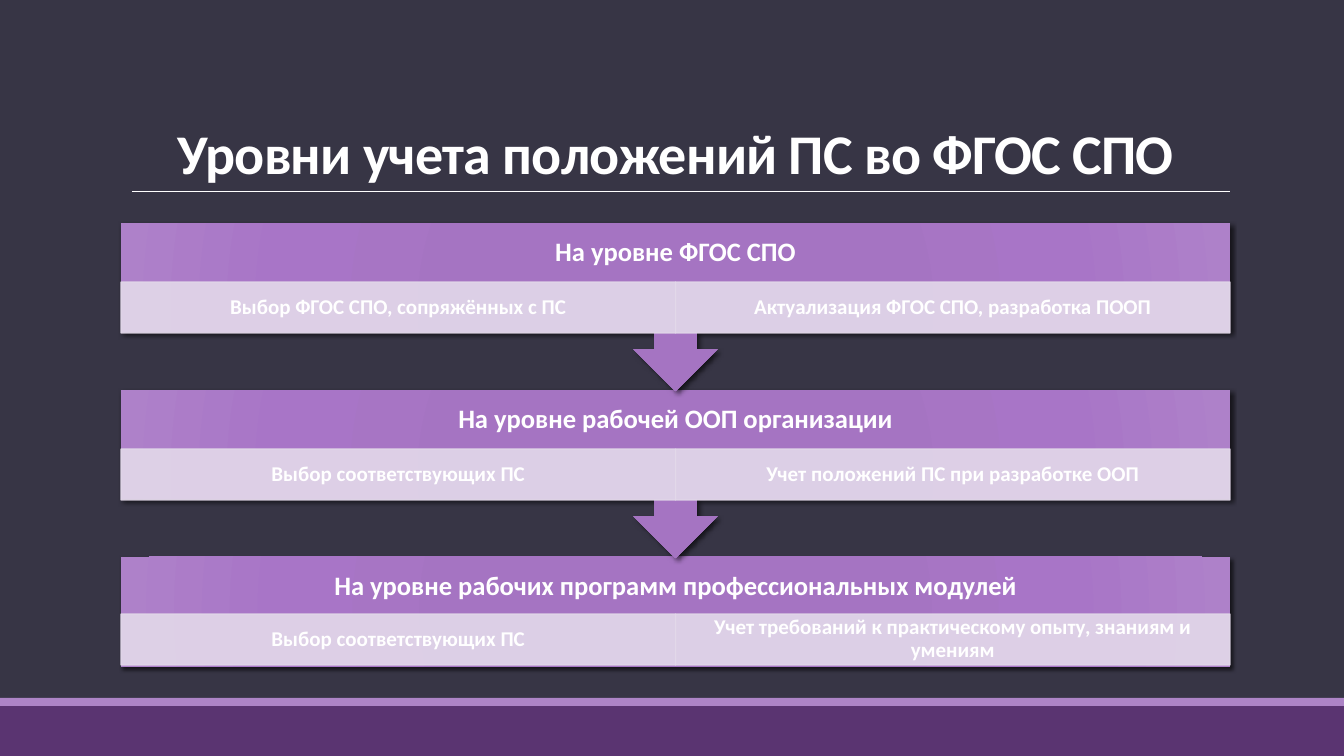
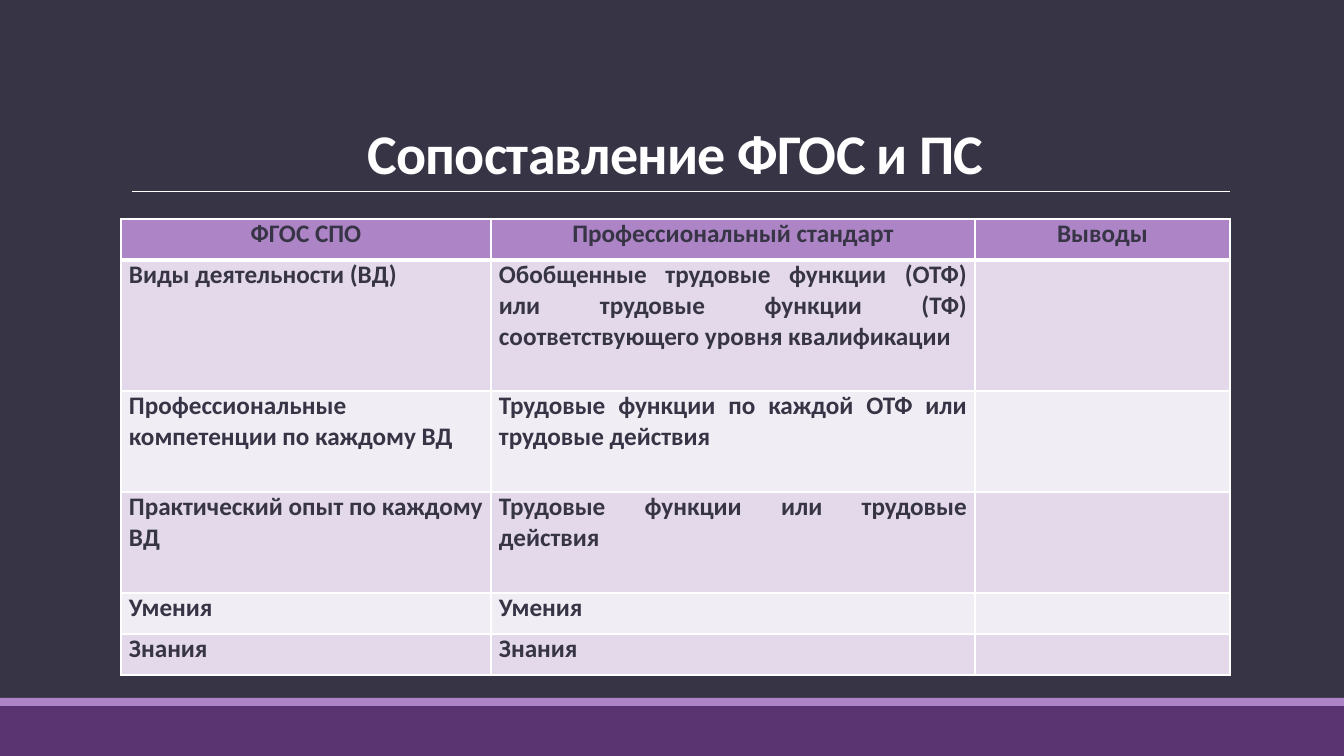
"""Build two slides on how professional standards feed into educational standards."""
from dataclasses import dataclass

from lxml.etree import SubElement
from pptx import Presentation
from pptx.dml.color import RGBColor
from pptx.enum.shapes import MSO_CONNECTOR, MSO_SHAPE
from pptx.enum.text import MSO_ANCHOR as Anchor, PP_ALIGN as Align
from pptx.oxml import parse_xml
from pptx.oxml.ns import nsdecls, qn
from pptx.shapes.autoshape import Shape
from pptx.slide import Slide
from pptx.table import _Cell as Cell
from pptx.text.text import TextFrame
from pptx.util import Emu, Pt

SLIDE_W, SLIDE_H = 1344, 756
EMU_PER_PX = 12192000 / SLIDE_W
LEFT, CONTENT_W = 121, 1109

FONT = "Calibri"
WHITE = "FFFFFF"
DARK = "373545"
PLUM = "5A3471"
LILAC = "AD84C6"
PALE = "E3D9EA"
PALEST = "F1EDF5"
LEVEL_GRADIENT = ((0, "A372C2"), (34, "A574C2"), (70, "A875C7"), (100, "AE81C9"))

LEVEL_TOP, LEVEL_STEP = 223, 167
CALLOUT_H, LAST_LEVEL_H = 168, 110
HEADING_H, STEP_H = 59, 51


@dataclass(frozen=True)
class Box:
    left: int
    top: int
    width: int
    height: int

    def emu(self) -> tuple[Emu, ...]:
        return tuple(px(v) for v in (self.left, self.top, self.width, self.height))


@dataclass(frozen=True)
class TextStyle:
    size: int
    color: str = WHITE
    align: Align = Align.CENTER
    line_spacing: float = 1.0
    space_after: int = 0
    tracking: int = 0


@dataclass(frozen=True)
class Level:
    heading: str
    steps: tuple[str, str]
    heading_h: int = HEADING_H


@dataclass(frozen=True)
class Row:
    height: int
    texts: tuple[str, ...]


TITLE_STYLE = TextStyle(40, line_spacing=0.85, tracking=-50)
HEADING_STYLE = TextStyle(19, line_spacing=0.9)
STEP_STYLE = TextStyle(15, line_spacing=0.9)
HEADER_STYLE = TextStyle(18, DARK, space_after=6)
BODY_STYLE = TextStyle(18, DARK, Align.JUSTIFY, space_after=6)

LEVELS = (
    Level("На уровне ФГОС СПО",
          ("Выбор ФГОС СПО, сопряжённых с ПС", "Актуализация ФГОС СПО, разработка ПООП")),
    Level("На уровне рабочей ООП организации",
          ("Выбор соответствующих ПС", "Учет положений ПС при разработке ООП")),
    Level("На уровне рабочих программ профессиональных модулей",
          ("Выбор соответствующих ПС",
           "Учет требований к практическому опыту, знаниям и умениям"), 57),
)

COLUMN_WIDTHS = (370, 484, 255)
ROWS = (
    Row(41, ("ФГОС СПО", "Профессиональный стандарт", "Выводы")),
    Row(131, ("Виды деятельности (ВД)",
              "Обобщенные трудовые функции (ОТФ) или трудовые функции (ТФ) "
              "соответствующего уровня квалификации", "")),
    Row(101, ("Профессиональные компетенции по каждому ВД",
              "Трудовые функции по каждой ОТФ или трудовые действия", "")),
    Row(101, ("Практический опыт по каждому ВД",
              "Трудовые функции или трудовые действия", "")),
    Row(41, ("Умения", "Умения", "")),
    Row(41, ("Знания", "Знания", "")),
)


def px(value: float) -> Emu:
    return Emu(round(value * EMU_PER_PX))


def rgb(value: str) -> RGBColor:
    return RGBColor.from_string(value)


def write(frame: TextFrame, text: str, style: TextStyle) -> None:
    frame.text = text
    paragraph = frame.paragraphs[0]
    paragraph.alignment = style.align
    paragraph.line_spacing = style.line_spacing
    paragraph.space_after = Pt(style.space_after)
    for run in paragraph.runs:
        run.font.name = FONT
        run.font.size = Pt(style.size)
        run.font.bold = True
        run.font.color.rgb = rgb(style.color)
        if style.tracking:
            run.font._element.set("spc", str(style.tracking))


def set_insets(frame: TextFrame, side: int, edge: int) -> None:
    frame.margin_left = frame.margin_right = px(side)
    frame.margin_top = frame.margin_bottom = px(edge)


def add_label(slide: Slide, box: Box, text: str, style: TextStyle,
              anchor: Anchor, side: int, edge: int) -> None:
    frame = slide.shapes.add_textbox(*box.emu()).text_frame
    frame.word_wrap = True
    frame.vertical_anchor = anchor
    set_insets(frame, side, edge)
    write(frame, text, style)


def add_block(slide: Slide, box: Box, color: str,
              preset: MSO_SHAPE = MSO_SHAPE.RECTANGLE) -> Shape:
    block = slide.shapes.add_shape(preset, *box.emu())
    block.shadow.inherit = False
    block.fill.solid()
    block.fill.fore_color.rgb = rgb(color)
    block.line.fill.background()
    return block


def add_frame(slide: Slide, title: str) -> None:
    slide.background.fill.solid()
    slide.background.fill.fore_color.rgb = rgb(DARK)
    add_block(slide, Box(0, 706, SLIDE_W, 50), PLUM)
    add_block(slide, Box(0, 698, SLIDE_W, 8), LILAC)
    rule = slide.shapes.add_connector(
        MSO_CONNECTOR.STRAIGHT, px(132), px(191), px(1230), px(191))
    rule.line.color.rgb = rgb(WHITE)
    rule.line.width = Pt(0.5)
    SubElement(rule._element.spPr, qn("a:effectLst"))
    add_label(slide, Box(LEFT, 31, CONTENT_W, 160), title, TITLE_STYLE,
              Anchor.BOTTOM, 10, 5)


def apply_level_look(block: Shape) -> None:
    properties = block._element.spPr
    stops = "".join(
        f'<a:gs pos="{position * 1000}"><a:srgbClr val="{color}"/></a:gs>'
        for position, color in LEVEL_GRADIENT)
    gradient = parse_xml(
        f'<a:gradFill {nsdecls("a")} rotWithShape="1"><a:gsLst>{stops}</a:gsLst>'
        '<a:path path="circle"><a:fillToRect l="100000" t="100000" r="100000" b="100000"/>'
        '</a:path></a:gradFill>')
    properties.replace(properties.find(qn("a:solidFill")), gradient)
    properties.find(qn("a:effectLst")).append(parse_xml(
        f'<a:outerShdw {nsdecls("a")} blurRad="38100" dist="25400" dir="2700000" '
        'rotWithShape="0"><a:srgbClr val="000000"><a:alpha val="60000"/></a:srgbClr>'
        '</a:outerShdw>'))


def add_step(slide: Slide, box: Box, text: str) -> None:
    step = add_block(slide, box, PALE)
    step.line.color.rgb = rgb(PALE)
    step.line.width = Pt(1)
    for color in step._element.spPr.iter(qn("a:srgbClr")):
        SubElement(color, qn("a:alpha")).set("val", "90000")
    frame = step.text_frame
    frame.word_wrap = True
    frame.vertical_anchor = Anchor.MIDDLE
    set_insets(frame, 12, 2)
    write(frame, text, STEP_STYLE)


def add_level(slide: Slide, level: Level, top: int, is_last: bool) -> None:
    if is_last:
        block = add_block(slide, Box(LEFT, top, CONTENT_W, LAST_LEVEL_H), LILAC)
    else:
        block = add_block(slide, Box(LEFT, top, CONTENT_W, CALLOUT_H), LILAC,
                          MSO_SHAPE.UP_ARROW_CALLOUT)
        block.rotation = 180
    apply_level_look(block)
    add_label(slide, Box(LEFT, top, CONTENT_W, HEADING_H), level.heading,
              HEADING_STYLE, Anchor.MIDDLE, 15, 15)
    step_w = CONTENT_W / len(level.steps)
    for index, text in enumerate(level.steps):
        add_step(slide, Box(LEFT + index * step_w, top + level.heading_h, step_w, STEP_H), text)


def add_levels(slide: Slide) -> None:
    last = len(LEVELS) - 1
    for index in range(last, -1, -1):
        add_level(slide, LEVELS[index], LEVEL_TOP + index * LEVEL_STEP, index == last)


def set_borders(cell: Cell, top: int, bottom: int) -> None:
    widths = {"lnL": 1, "lnR": 1, "lnT": top, "lnB": bottom}
    for position, (edge, width) in enumerate(widths.items()):
        cell._tc.get_or_add_tcPr().insert(position, parse_xml(
            f'<a:{edge} {nsdecls("a")} w="{Pt(width)}"><a:solidFill>'
            f'<a:srgbClr val="{WHITE}"/></a:solidFill></a:{edge}>'))


def add_comparison(slide: Slide) -> None:
    box = Box(LEFT, 219, CONTENT_W, sum(row.height for row in ROWS))
    table = slide.shapes.add_table(len(ROWS), len(COLUMN_WIDTHS), *box.emu()).table
    for column, width in zip(table.columns, COLUMN_WIDTHS):
        column.width = px(width)
    for index, row in enumerate(ROWS):
        table.rows[index].height = px(row.height)
        is_header = index == 0
        fill = LILAC if is_header else PALE if index % 2 else PALEST
        for cell, text in zip(table.rows[index].cells, row.texts):
            cell.fill.solid()
            cell.fill.fore_color.rgb = rgb(fill)
            set_borders(cell, 3 if index == 1 else 1, 3 if is_header else 1)
            if text:
                set_insets(cell, 8, 0)
                write(cell.text_frame, text, HEADER_STYLE if is_header else BODY_STYLE)


def main() -> None:
    deck = Presentation()
    deck.slide_width, deck.slide_height = px(SLIDE_W), px(SLIDE_H)
    blank = deck.slide_layouts[6]
    contents = (
        ("Уровни учета положений ПС во ФГОС СПО", add_levels),
        ("Сопоставление ФГОС и ПС", add_comparison),
    )
    for title, add_content in contents:
        slide = deck.slides.add_slide(blank)
        add_frame(slide, title)
        add_content(slide)
    deck.save("out.pptx")


if __name__ == "__main__":
    main()
